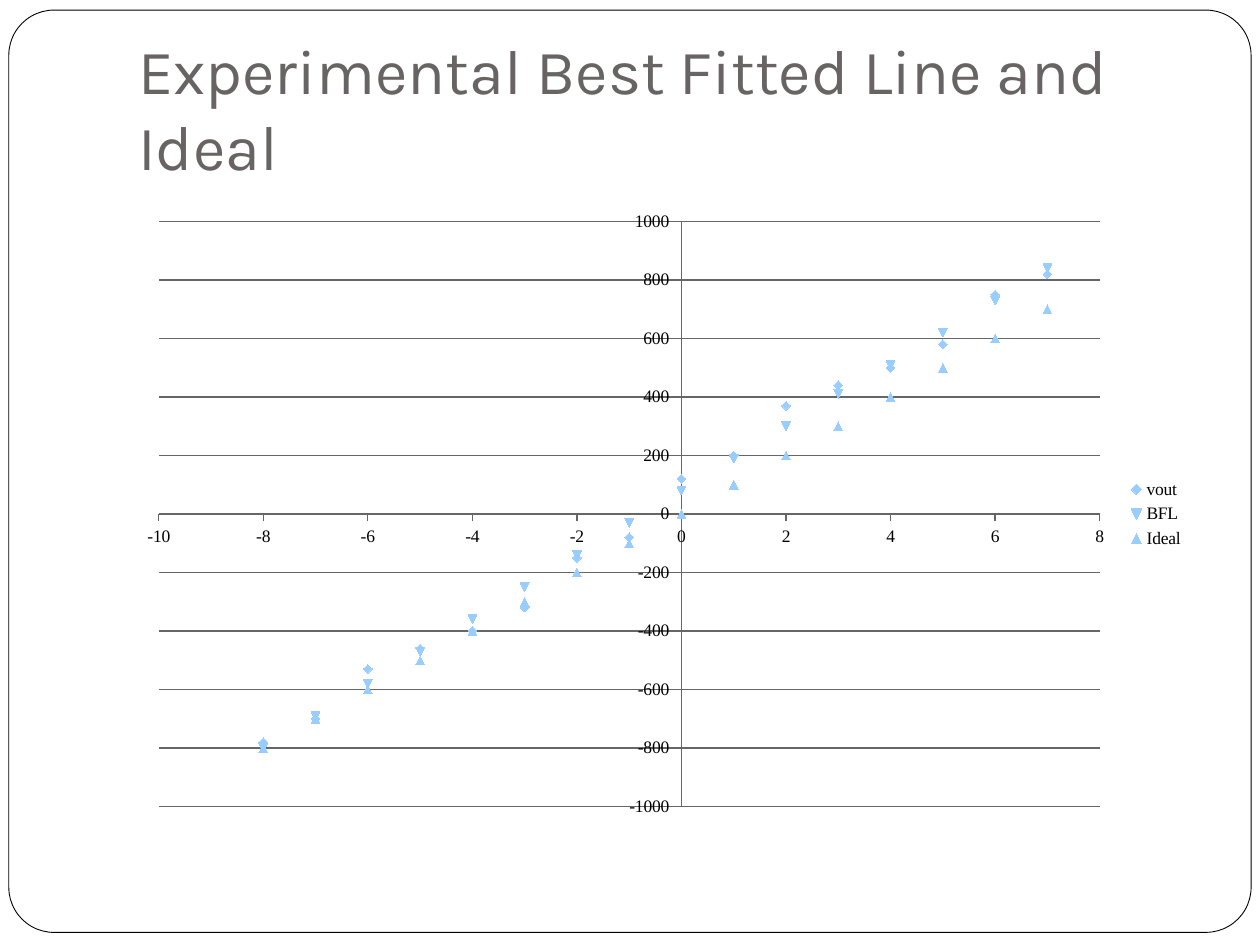
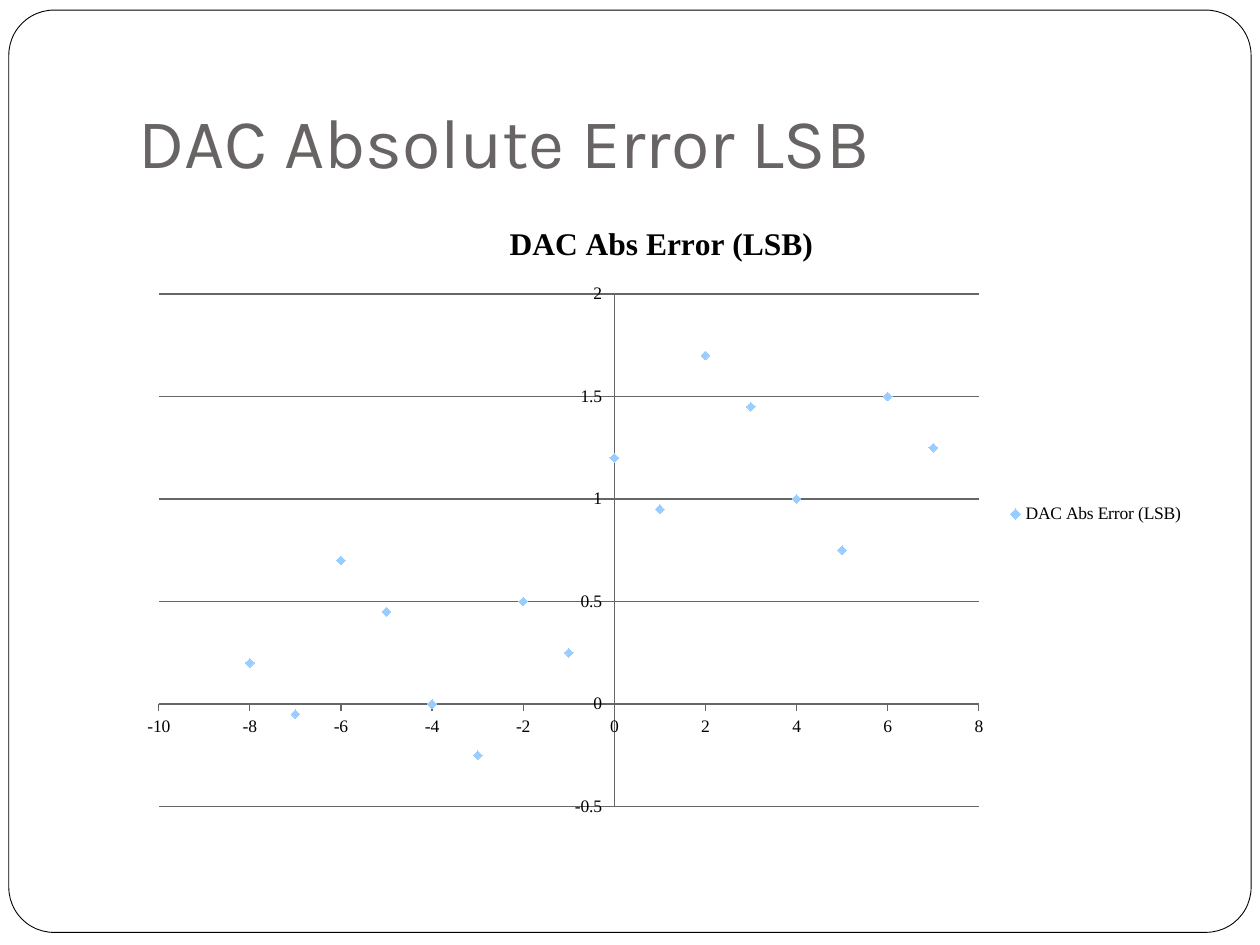
from dataclasses import dataclass

from pptx import Presentation
from pptx.chart.axis import ValueAxis
from pptx.chart.data import XyChartData
from pptx.dml.color import RGBColor
from pptx.enum.chart import XL_CHART_TYPE, XL_LEGEND_POSITION, XL_TICK_MARK
from pptx.enum.shapes import MSO_SHAPE
from pptx.enum.text import MSO_ANCHOR
from pptx.slide import Slide
from pptx.util import Inches, Pt


@dataclass(frozen=True)
class Theme:
    paper: RGBColor = RGBColor(0xFF, 0xFF, 0xFF)
    ink: RGBColor = RGBColor(0, 0, 0)
    title: RGBColor = RGBColor(0x69, 0x64, 0x64)
    grid: RGBColor = RGBColor(0x66, 0x66, 0x66)
    marker: RGBColor = RGBColor(0x99, 0xCC, 0xFF)
    title_font: str = "Karla"
    chart_font: str = "Times New Roman"
    chart_size: Pt = Pt(10)
    chart_title_size: Pt = Pt(18)
    marker_size: int = 5


@dataclass(frozen=True)
class Scale:
    low: float
    high: float
    step: float


@dataclass(frozen=True)
class ScatterSlide:
    title: str
    title_size: int
    series: dict[str, list[float]]
    y_scale: Scale
    chart_title: str = ""


THEME = Theme()
CODES = range(-8, 8)
CODE_SCALE = Scale(-10, 8, 2)

SLIDES = [
    ScatterSlide(
        "Experimental Best Fitted Line and Ideal", 36,
        {
            "vout": [-780, -700, -530, -460, -400, -320, -150, -80,
                     120, 200, 370, 440, 500, 580, 750, 820],
            "BFL": [-800, -690, -580, -470, -360, -250, -140, -30,
                    80, 190, 300, 410, 510, 620, 730, 840],
            "Ideal": [100 * code for code in CODES],
        },
        Scale(-1000, 1000, 200),
    ),
    ScatterSlide(
        "DAC Absolute Error LSB", 40,
        {
            "DAC Abs Error (LSB)": [0.2, -0.05, 0.7, 0.45, 0, -0.25, 0.5, 0.25,
                                    1.2, 0.95, 1.7, 1.45, 1, 0.75, 1.5, 1.25],
        },
        Scale(-0.5, 2, 0.5),
        "DAC Abs Error (LSB)",
    ),
]


def add_frame(s: Slide) -> None:
    sp = s.shapes.add_shape(MSO_SHAPE.ROUNDED_RECTANGLE, Inches(0.07),
                            Inches(0.08), Inches(9.86), Inches(7.32))
    sp.adjustments[0] = 0.049
    sp.shadow.inherit = False
    sp.fill.solid()
    sp.fill.fore_color.rgb = THEME.paper
    sp.line.color.rgb = THEME.ink
    sp.line.width = Pt(0.5)


def add_title(s: Slide, text: str, size: int) -> None:
    tf = s.shapes.add_textbox(Inches(1), Inches(0.3), Inches(8.5),
                              Inches(1.25)).text_frame
    tf.word_wrap = True
    tf.vertical_anchor = MSO_ANCHOR.BOTTOM
    tf.margin_bottom = Inches(0.1)
    tf.text = text
    font = tf.paragraphs[0].runs[0].font
    font.name = THEME.title_font
    font.size = Pt(size)
    font.color.rgb = THEME.title


def style_axis(axis: ValueAxis, scale: Scale, gridlines: bool) -> None:
    axis.minimum_scale = scale.low
    axis.maximum_scale = scale.high
    axis.major_unit = scale.step
    axis.major_tick_mark = XL_TICK_MARK.OUTSIDE
    axis.minor_tick_mark = XL_TICK_MARK.NONE
    axis.has_major_gridlines = gridlines
    lines = [axis.format.line]
    if gridlines:
        lines.append(axis.major_gridlines.format.line)
    for line in lines:
        line.color.rgb = THEME.grid
        line.width = Pt(0.75)


def add_scatter(s: Slide, content: ScatterSlide) -> None:
    data = XyChartData()
    for name, values in content.series.items():
        series = data.add_series(name)
        for code, value in zip(CODES, values):
            series.add_data_point(code, value)
    chart = s.shapes.add_chart(XL_CHART_TYPE.XY_SCATTER, Inches(1), Inches(1.58),
                               Inches(8.5), Inches(5), data).chart
    chart.font.name = THEME.chart_font
    chart.font.size = THEME.chart_size
    chart.font.color.rgb = THEME.ink

    chart.has_title = bool(content.chart_title)
    if content.chart_title:
        tf = chart.chart_title.text_frame
        tf.text = content.chart_title
        font = tf.paragraphs[0].runs[0].font
        font.name = THEME.chart_font
        font.size = THEME.chart_title_size
        font.bold = True
        font.color.rgb = THEME.ink

    chart.has_legend = True
    chart.legend.position = XL_LEGEND_POSITION.RIGHT
    chart.legend.include_in_layout = False
    style_axis(chart.category_axis, CODE_SCALE, gridlines=False)
    style_axis(chart.value_axis, content.y_scale, gridlines=True)

    plot = chart.plots[0]
    plot.vary_by_categories = False
    for series in plot.series:
        series.format.line.fill.background()
        marker = series.marker
        marker.size = THEME.marker_size
        marker.format.fill.solid()
        marker.format.fill.fore_color.rgb = THEME.marker
        marker.format.line.fill.background()


def main() -> None:
    prs = Presentation()
    prs.slide_width = Inches(10)
    prs.slide_height = Inches(7.5)
    for content in SLIDES:
        s = prs.slides.add_slide(prs.slide_layouts[6])
        add_frame(s)
        add_title(s, content.title, content.title_size)
        add_scatter(s, content)
    prs.save("out.pptx")


if __name__ == "__main__":
    main()
